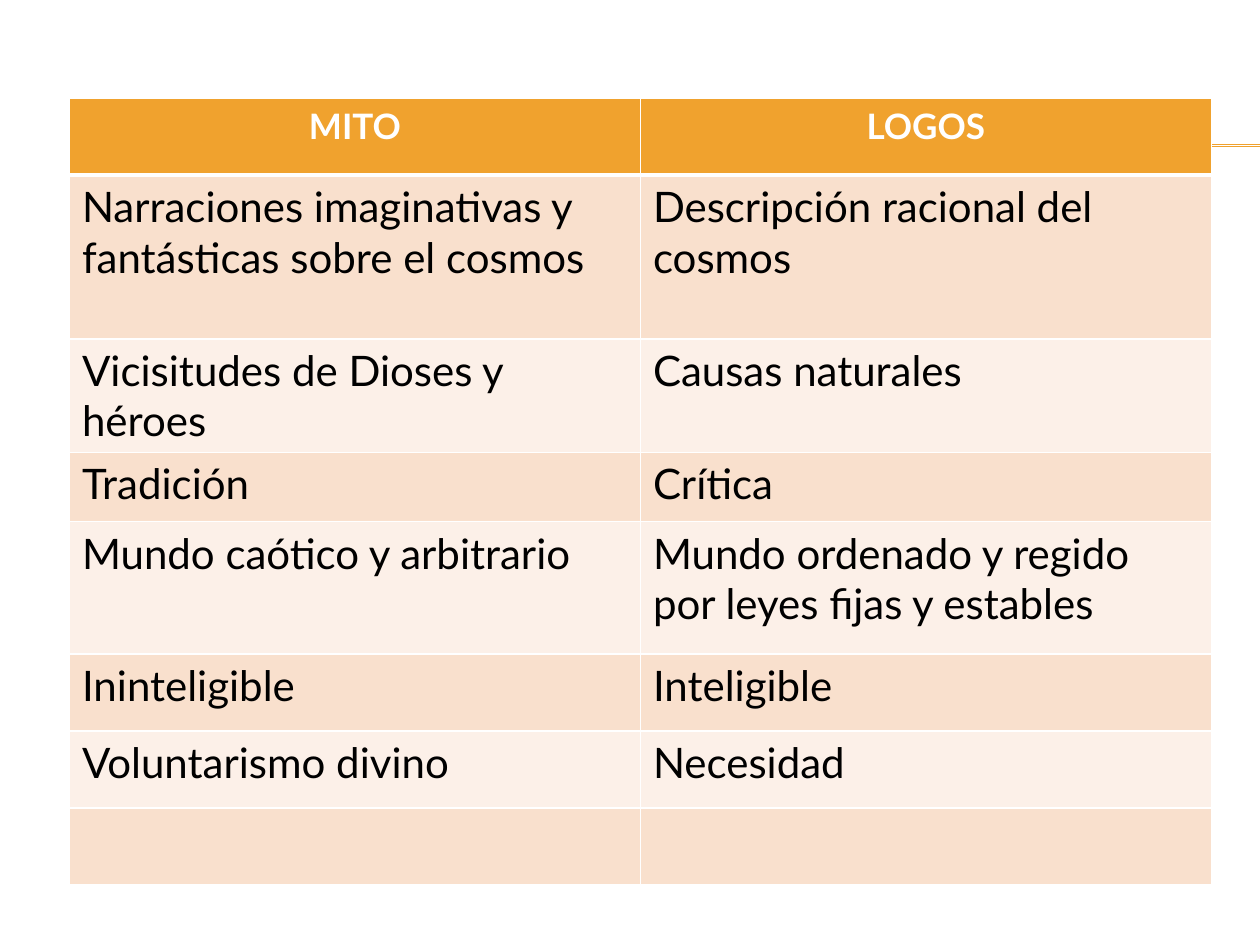
from lxml.etree import SubElement
from pptx import Presentation
from pptx.dml.color import RGBColor
from pptx.enum.shapes import MSO_CONNECTOR
from pptx.enum.text import PP_ALIGN
from pptx.oxml.ns import qn
from pptx.util import Cm, Pt

ORANGE, WHITE, BLACK = "F0A22E", "FFFFFF", "000000"
BANDS = ["F9E0CD", "FCF0E8"]
ROWS = [
    (1.55, "MITO", "LOGOS"),
    (3.3, "Narraciones imaginativas y fantásticas sobre el cosmos",
     "Descripción racional del cosmos"),
    (2.28, "Vicisitudes de Dioses y héroes", "Causas naturales"),
    (1.4, "Tradición", "Crítica"),
    (2.67, "Mundo caótico y arbitrario",
     "Mundo ordenado y regido por leyes fijas y estables"),
    (1.55, "Ininteligible", "Inteligible"),
    (1.55, "Voluntarismo divino", "Necesidad"),
    (1.55, "", ""),
]


def color(value):
    return RGBColor.from_string(value)


def add_rule(page, top):
    rule = page.shapes.add_connector(
        MSO_CONNECTOR.STRAIGHT, Cm(1.42), Cm(top), Cm(25.4), Cm(top))
    rule.line.color.rgb = color(ORANGE)
    rule.line.width = Pt(0.75)
    SubElement(rule._element.spPr, qn("a:effectLst"))


def set_borders(cell, widths):
    properties = cell._tc.get_or_add_tcPr()
    for side, width in widths.items():
        border = SubElement(properties, qn(f"a:ln{side}"), w=str(Pt(width)))
        fill = SubElement(border, qn("a:solidFill"))
        SubElement(fill, qn("a:srgbClr"), val=WHITE)


def fill_cell(cell, text, row):
    header = row == 0
    set_borders(cell, {"L": 1, "R": 1, "T": 3 if row == 1 else 1,
                       "B": 3 if header else 1})
    cell.fill.solid()
    cell.fill.fore_color.rgb = color(ORANGE if header else BANDS[(row - 1) % 2])
    cell.text = text
    para = cell.text_frame.paragraphs[0]
    para.alignment = PP_ALIGN.CENTER if header else PP_ALIGN.LEFT
    para.font.name = "Lato"
    para.font.size = Pt(20 if header else 24)
    para.font.bold = header
    para.font.color.rgb = color(WHITE if header else BLACK)


def add_comparison(page):
    height = sum(row[0] for row in ROWS)
    table = page.shapes.add_table(
        len(ROWS), 2, Cm(1.4), Cm(1.98), Cm(23.02), Cm(height)).table
    for index, (row_height, *texts) in enumerate(ROWS):
        table.rows[index].height = Cm(row_height)
        for column, text in enumerate(texts):
            fill_cell(table.cell(index, column), text, index)


def main():
    deck = Presentation()
    deck.slide_width, deck.slide_height = Cm(25.4), Cm(19.05)
    page = deck.slides.add_slide(deck.slide_layouts[6])
    for top in (2.92, 2.95):
        add_rule(page, top)
    add_comparison(page)
    deck.save("out.pptx")


if __name__ == "__main__":
    main()
